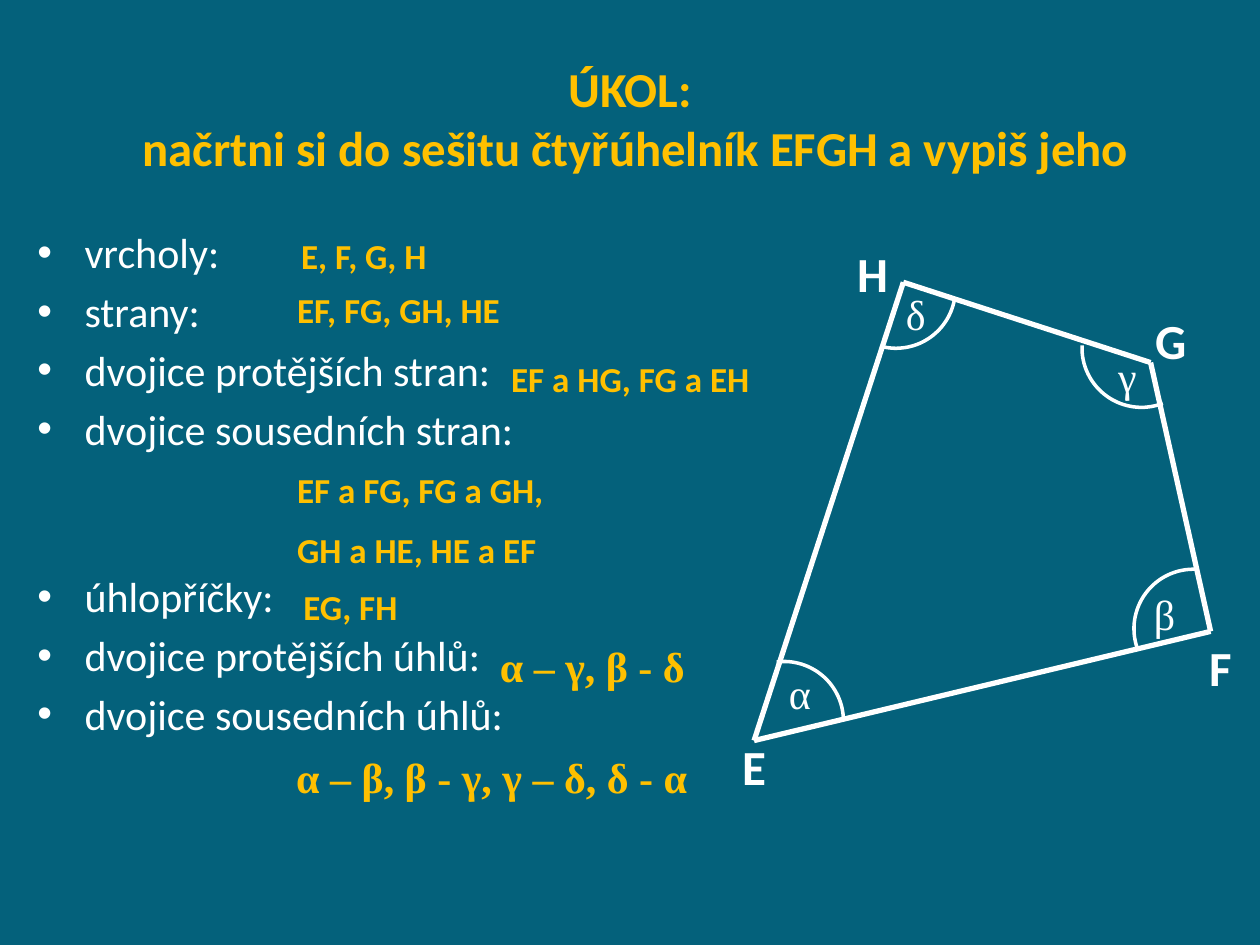
from itertools import pairwise
from math import cos, radians, sin

from lxml import etree
from pptx import Presentation
from pptx.dml.color import RGBColor
from pptx.enum.shapes import MSO_CONNECTOR
from pptx.enum.text import MSO_ANCHOR, PP_ALIGN
from pptx.oxml.ns import qn
from pptx.util import Pt

TEAL = RGBColor(0x04, 0x61, 0x7B)
GOLD = RGBColor(0xFF, 0xC0, 0x00)
WHITE = RGBColor(0xFF, 0xFF, 0xFF)
LEFT, CENTER = PP_ALIGN.LEFT, PP_ALIGN.CENTER
MIDDLE = MSO_ANCHOR.MIDDLE
STRAIGHT = MSO_CONNECTOR.STRAIGHT
SANS, SERIF = "Calibri", "Times New Roman"

TITLE = dict(name=SANS, size=Pt(27.9), bold=True)
TASK = dict(name=SANS, size=Pt(24), bold=False)
VERTEX = dict(name=SANS, size=Pt(28), bold=True)
ANGLE = dict(name=SERIF, size=Pt(24), bold=False)
ANSWER = dict(name=SANS, size=Pt(20), bold=True)
GREEK_ANSWER = dict(name=SERIF, size=Pt(24), bold=True)

# Text and space before it, in points
TASKS = [
    ("vrcholy:", 0),
    ("strany:", 4.8),
    ("dvojice protějších stran:", 4.8),
    ("dvojice sousedních stran:", 4.8),
    ("úhlopříčky:", 67),
    ("dvojice protějších úhlů:", 4.8),
    ("dvojice sousedních úhlů:", 4.8),
]

# Corner: point, label position
VERTICES = {
    "E": ((430.9, 423.2), (408.4, 417.5)),
    "F": ((691.8, 360.8), (674.8, 361)),
    "G": ((657.5, 207.2), (646.5, 173.8)),
    "H": ((516.2, 161.3), (476, 135.8)),
}

# Angle: arc centre, start and end in degrees clockwise, label position, alignment
ANGLES = {
    "α": ((448, 412), 263, 360, (442.3, 378), CENTER),
    "β": ((682, 359.3), 161.5, 272, (652.3, 332.5), LEFT),
    "γ": ((652.3, 198.8), 69, 182.5, (629.5, 196.5), CENTER),
    "δ": ((512, 165), 11, 104, (508.5, 161.5), CENTER),
}
ARC_RADIUS = 34

# Lines of text, left, top, width, height, format
ANSWERS = [
    (["E, F, G, H"], 165, 130.2, 113, 31, ANSWER),
    (["EF, FG, GH, HE"], 162.7, 161.5, 158.5, 31, ANSWER),
    (["EF a HG, FG a EH"], 285, 201, 187, 31, ANSWER),
    (["EF a FG, FG a GH,", "GH a HE, HE a EF"], 162.7, 264.3, 179.5, 67.5, ANSWER),
    (["EG, FH"], 166.3, 331, 113, 31, ANSWER),
    (["α – γ, β - δ"], 278.6, 362.2, 124.5, 36, GREEK_ANSWER),
    (["α – β, β - γ, γ – δ, δ - α"], 162.2, 426.2, 245.5, 36, GREEK_ANSWER),
]


class Deck:
    """Presentation, its current slide and the shared style."""

    def __init__(self, width, height):
        self.prs = Presentation()
        self.prs.slide_width, self.prs.slide_height = Pt(width), Pt(height)

    def add_slide(self):
        self.s = self.prs.slides.add_slide(self.prs.slide_layouts[5])
        fill = self.s.background.fill
        fill.solid()
        fill.fore_color.rgb = TEAL

    def format(self, p, style, color, align=LEFT, before=0):
        p.alignment, p.space_before = align, Pt(before)
        for r in p.runs:
            for key, value in style.items():
                setattr(r.font, key, value)
            r.font.color.rgb = color

    def title(self, text, x, y, w, h):
        sp = self.s.shapes.title
        sp.left, sp.top, sp.width, sp.height = map(Pt, (x, y, w, h))
        tf = sp.text_frame
        tf.text, tf.vertical_anchor, tf.word_wrap = text, MIDDLE, True
        self.format(tf.paragraphs[0], TITLE, GOLD, CENTER)

    def text(self, lines, x, y, w, h, style, color, align=LEFT, gap=10):
        tf = self.s.shapes.add_textbox(*map(Pt, (x, y, w, h))).text_frame
        tf.word_wrap = True
        tf.text = "\n".join(lines)
        for i, p in enumerate(tf.paragraphs):
            self.format(p, style, color, align, gap if i else 0)
        return tf

    def bullets(self, items, x, y, w, h, indent=27):
        tf = self.text([text for text, _ in items], x, y, w, h, TASK, WHITE)
        for p, (_, before) in zip(tf.paragraphs, items):
            p.space_before = Pt(before)
            pPr = p._p.get_or_add_pPr()
            pPr.set("marL", str(Pt(indent)))
            pPr.set("indent", str(-Pt(indent)))
            etree.SubElement(pPr, qn("a:buFont")).set("typeface", "Arial")
            etree.SubElement(pPr, qn("a:buChar")).set("char", "•")

    def line(self, start, end):
        sp = self.s.shapes.add_connector(STRAIGHT, *map(Pt, (*start, *end)))
        sp.line.color.rgb, sp.line.width = WHITE, Pt(3)
        etree.SubElement(sp._element.spPr, qn("a:effectLst"))

    def arc(self, center, radius, start, end, steps=32):
        """Open circular arc, clockwise from start to end in degrees."""
        x, y = center
        turns = [radians(start + (end - start) * i / steps) for i in range(steps + 1)]
        points = [(Pt(x + radius * cos(a)), Pt(y + radius * sin(a))) for a in turns]
        builder = self.s.shapes.build_freeform(*points[0])
        builder.add_line_segments(points[1:], close=False)
        sp = builder.convert_to_shape()
        sp.shadow.inherit = False
        sp.fill.background()
        sp.line.color.rgb, sp.line.width = WHITE, Pt(2)


def main():
    deck = Deck(720, 540)
    deck.add_slide()
    deck.title("ÚKOL:\v načrtni si do sešitu čtyřúhelník EFGH a vypiš jeho",
               36, 21.5, 648, 91)
    deck.bullets(TASKS, 14.2, 126, 306, 356)

    corners = [point for point, _ in VERTICES.values()]
    for start, end in pairwise(corners + corners[:1]):
        deck.line(start, end)
    for name, (center, start, end, label, align) in ANGLES.items():
        deck.arc(center, ARC_RADIUS, start, end)
        deck.text([name], *label, 29.5, 36, ANGLE, WHITE, align)
    for name, (_, label) in VERTICES.items():
        deck.text([name], *label, 45.5, 41, VERTEX, WHITE, CENTER)
    for *place, style in ANSWERS:
        deck.text(*place, style, GOLD)

    deck.prs.save("out.pptx")


if __name__ == "__main__":
    main()
